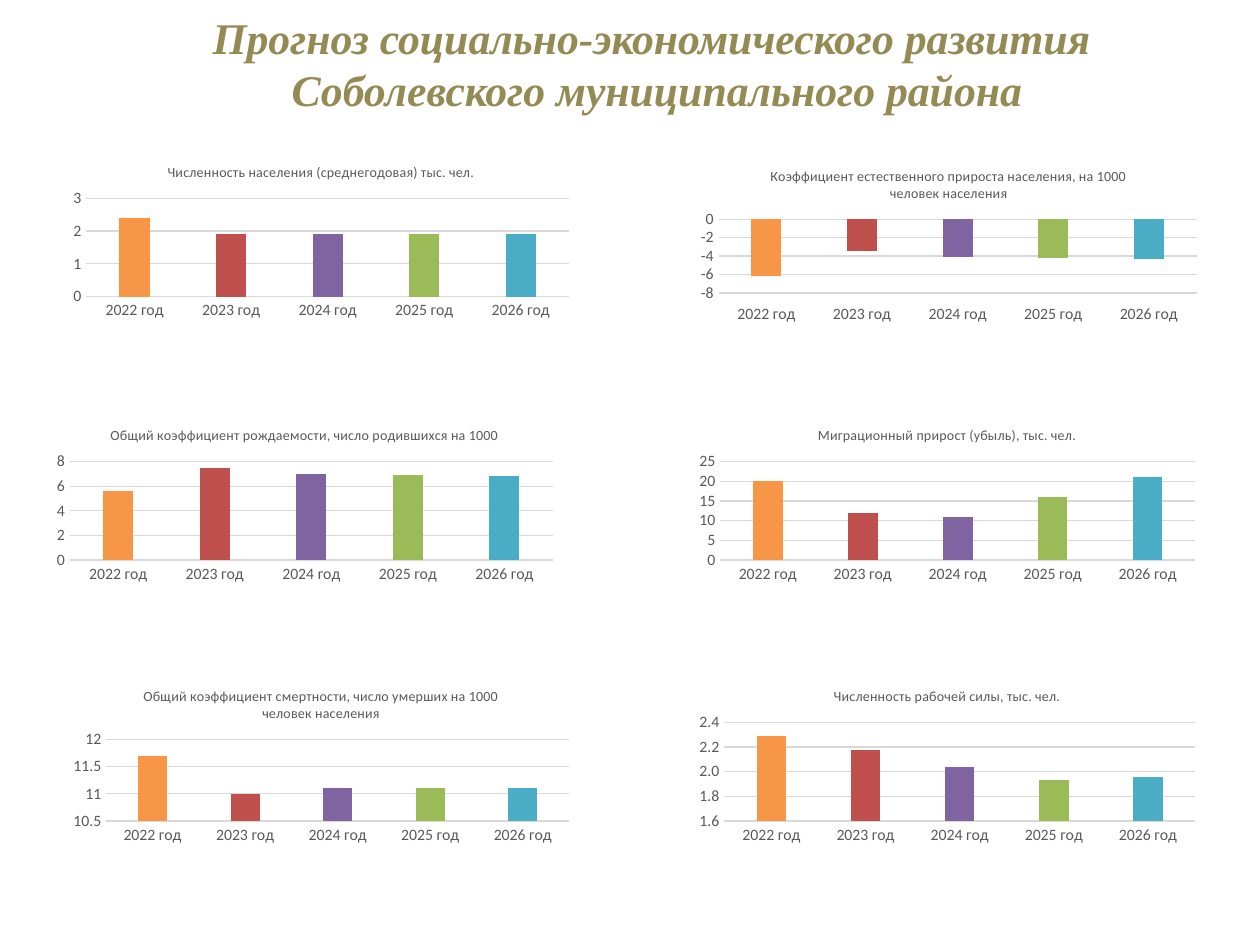
from pptx import Presentation
from pptx.chart.data import CategoryChartData
from pptx.dml.color import RGBColor
from pptx.enum.chart import XL_CHART_TYPE, XL_TICK_LABEL_POSITION, XL_TICK_MARK
from pptx.enum.text import MSO_ANCHOR, MSO_AUTO_SIZE, PP_ALIGN
from pptx.util import Cm, Pt

OLIVE = RGBColor(0x94, 0x8A, 0x54)
BLACK = RGBColor(0, 0, 0)
TEXT_GRAY = RGBColor(0x59, 0x59, 0x59)
LINE_GRAY = RGBColor(0xD9, 0xD9, 0xD9)
YEAR_COLORS = [
    RGBColor(0xF7, 0x96, 0x46),
    RGBColor(0xC0, 0x50, 0x4D),
    RGBColor(0x80, 0x64, 0xA2),
    RGBColor(0x9B, 0xBB, 0x59),
    RGBColor(0x4B, 0xAC, 0xC6),
]
YEARS = [f"{year} год" for year in range(2022, 2027)]
CHART_WIDTH, CHART_HEIGHT = 10.41, 3.5

# Left, top (cm), title, values, axis (minimum, maximum, step), number format
CHARTS = [
    (1.27, 3.02, "Численность населения (среднегодовая) тыс. чел.",
     [2.4, 1.9, 1.9, 1.9, 1.9], (0, 3, 1), "General"),
    (13.92, 3.1, "Коэффициент естественного прироста населения, на 1000 человек населения",
     [-6.1, -3.5, -4.1, -4.2, -4.3], (-8, 0, 2), "General"),
    (0.94, 8.33, "Общий коэффициент рождаемости, число родившихся на 1000",
     [5.6, 7.5, 7, 6.9, 6.8], (0, 8, 2), "General"),
    (13.89, 8.33, "Миграционный прирост (убыль), тыс. чел.",
     [20, 12, 11, 16, 21], (0, 25, 5), "General"),
    (1.27, 13.59, "Общий коэффициент смертности, число умерших на 1000 человек населения",
     [11.7, 11, 11.1, 11.1, 11.1], (10.5, 12, 0.5), "General"),
    (13.89, 13.59, "Численность рабочей силы, тыс. чел.",
     [2.29, 2.18, 2.04, 1.93, 1.96], (1.6, 2.4, 0.2), "0.0"),
]


def set_font(font, size, color, name="Calibri", bold=False):
    font.name = name
    font.size = Pt(size)
    font.bold = bold
    font.color.rgb = color


def add_heading(slide, left, top, width, height):
    title = slide.shapes.title
    title.left, title.top = Cm(left), Cm(top)
    title.width, title.height = Cm(width), Cm(height)
    frame = title.text_frame
    frame.auto_size = MSO_AUTO_SIZE.NONE
    frame.word_wrap = True
    frame.vertical_anchor = MSO_ANCHOR.MIDDLE
    frame.text = ("Прогноз социально-экономического развития \n"
                  "Соболевского муниципального района")
    for paragraph in frame.paragraphs:
        properties = paragraph._p.get_or_add_pPr()
        properties.set("marL", str(Cm(1.98)))
        properties.set("indent", "0")
        paragraph.alignment = PP_ALIGN.CENTER
        paragraph.space_before = Pt(0)
        set_font(paragraph.font, 25, OLIVE, "Times New Roman", bold=True)
        paragraph.font.italic = True


def format_axes(chart, scale, number_format):
    for axis in (chart.category_axis, chart.value_axis):
        axis.major_tick_mark = axis.minor_tick_mark = XL_TICK_MARK.NONE
        set_font(axis.tick_labels.font, 9, TEXT_GRAY)

    years = chart.category_axis
    years.has_major_gridlines = False
    years.format.line.color.rgb = LINE_GRAY
    years.format.line.width = Pt(0.75)

    values = chart.value_axis
    values.minimum_scale, values.maximum_scale, values.major_unit = scale
    values.format.line.fill.background()
    values.has_major_gridlines = True
    values.major_gridlines.format.line.color.rgb = LINE_GRAY
    values.major_gridlines.format.line.width = Pt(0.75)
    values.tick_labels.number_format = number_format
    values.tick_labels.number_format_is_linked = False
    # Year labels stay below columns that hang down
    if scale[0] < 0:
        years.tick_label_position = XL_TICK_LABEL_POSITION.LOW


def add_year_chart(slide, left, top, title, numbers, scale, number_format):
    data = CategoryChartData()
    data.categories = YEARS
    data.add_series(title, numbers)
    chart = slide.shapes.add_chart(
        XL_CHART_TYPE.COLUMN_CLUSTERED, Cm(left), Cm(top),
        Cm(CHART_WIDTH), Cm(CHART_HEIGHT), data).chart
    set_font(chart.font, 10, BLACK)
    chart.has_legend = False

    # Chart title
    chart.has_title = True
    chart.chart_title.include_in_layout = False
    frame = chart.chart_title.text_frame
    frame.text = title
    set_font(frame.paragraphs[0].font, 8, TEXT_GRAY)

    format_axes(chart, scale, number_format)

    # One colour for each year
    plot = chart.plots[0]
    plot.gap_width = 219
    plot.vary_by_categories = False
    series = plot.series[0]
    series.invert_if_negative = False
    for index, color in enumerate(YEAR_COLORS):
        fill = series.points[index].format.fill
        fill.solid()
        fill.fore_color.rgb = color


def main():
    presentation = Presentation()
    presentation.slide_width, presentation.slide_height = Cm(25.4), Cm(19.05)
    slide = presentation.slides.add_slide(presentation.slide_layouts[5])
    add_heading(slide, -1.3, 0.48, 27.1, 1.57)
    for chart in CHARTS:
        add_year_chart(slide, *chart)
    presentation.save("out.pptx")


if __name__ == "__main__":
    main()
